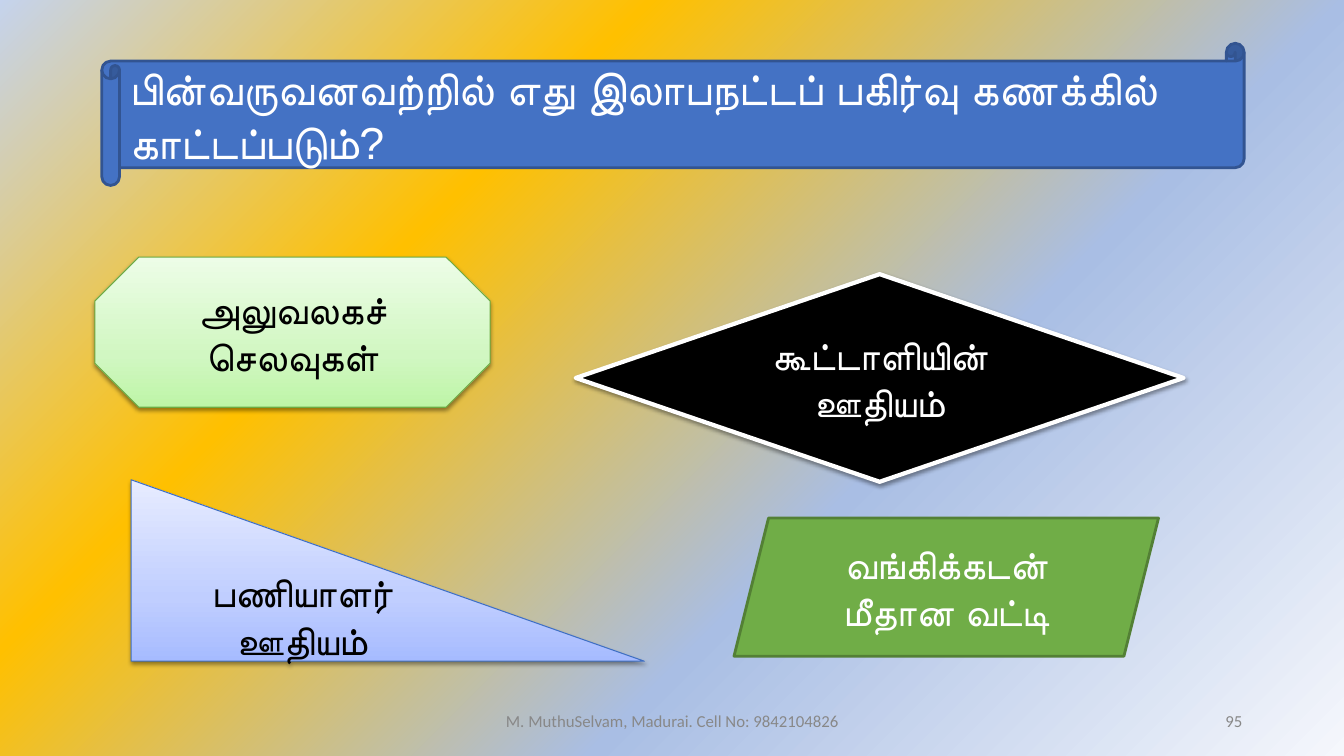
"""Builds a Tamil quiz slide with one question and four answer shapes."""
from lxml import etree
from pptx import Presentation
from pptx.dml.color import RGBColor
from pptx.enum.shapes import MSO_SHAPE
from pptx.enum.text import MSO_ANCHOR, MSO_AUTO_SIZE, PP_ALIGN
from pptx.oxml.ns import qn
from pptx.util import Inches, Pt

SCROLL = MSO_SHAPE.HORIZONTAL_SCROLL
OCTAGON = MSO_SHAPE.OCTAGON
DIAMOND = MSO_SHAPE.DIAMOND
TRIANGLE = MSO_SHAPE.RIGHT_TRIANGLE
PARALLELOGRAM = MSO_SHAPE.PARALLELOGRAM
MIDDLE = MSO_ANCHOR.MIDDLE
NO_AUTOFIT = MSO_AUTO_SIZE.NONE
LEFT, CENTER, RIGHT = PP_ALIGN.LEFT, PP_ALIGN.CENTER, PP_ALIGN.RIGHT
TITLE_ONLY = 5
WHITE, BLACK, GREY = "FFFFFF", "000000", "888888"


def color(hex_text):
    return RGBColor.from_string(hex_text)


def add_node(parent, tag, **attributes):
    node = etree.SubElement(parent, qn(tag))
    for key, value in attributes.items():
        node.set(key, str(value))
    return node


def add_gradient(parent, stops):
    gradient = add_node(parent, "a:gradFill", rotWithShape=1)
    stop_list = add_node(gradient, "a:gsLst")
    for percent, hex_text in stops:
        stop = add_node(stop_list, "a:gs", pos=percent * 1000)
        add_node(stop, "a:srgbClr", val=hex_text)
    return gradient


class QuizSlide:
    """Holds the quiz style and the slide being filled."""

    def __init__(self, presentation):
        self.slide = presentation.slides.add_slide(presentation.slide_layouts[TITLE_ONLY])
        self.quiz_font = "Arial"
        self.footer_font = "Calibri"
        self.question_size = 32
        self.answer_size = 28
        self.footer_size = 12

    def background(self, stops):
        self.slide.background.fill.solid()
        properties = self.slide.element.find(".//" + qn("p:bgPr"))
        gradient = add_gradient(properties, stops)
        properties.replace(properties[0], gradient)
        circle = add_node(gradient, "a:path", path="circle")
        add_node(circle, "a:fillToRect", l=100000, t=100000)

    def add_text(self, holder, text, size, font, hex_text, align):
        frame = holder.text_frame
        frame.word_wrap = True
        frame.auto_size = NO_AUTOFIT
        frame.vertical_anchor = MIDDLE
        paragraph = frame.paragraphs[0]
        paragraph.alignment = align
        run = paragraph.add_run()
        run.text = text
        run.font.size = Pt(size)
        run.font.name = font
        run.font.color.rgb = color(hex_text)
        run_properties = holder.element.find(".//" + qn("a:rPr"))
        add_node(run_properties, "a:cs", typeface=font)

    def panel(self, preset, box, fill, line, width, shadow=False):
        panel = self.slide.shapes.add_shape(preset, *map(Inches, box))
        if isinstance(fill, str):
            panel.fill.solid()
            panel.fill.fore_color.rgb = color(fill)
        else:
            gradient = add_gradient(panel.element.spPr, fill)
            add_node(gradient, "a:lin", ang=270 * 60000, scaled=0)
        panel.line.color.rgb = color(line)
        panel.line.width = Pt(width)
        panel.shadow.inherit = False
        if shadow:
            effects = panel.element.spPr.find(qn("a:effectLst"))
            outer = add_node(effects, "a:outerShdw", blurRad=Pt(3.1), dist=Pt(1.6),
                             dir=90 * 60000, rotWithShape=0)
            shade = add_node(outer, "a:srgbClr", val=BLACK)
            add_node(shade, "a:alpha", val=38000)
        return panel

    def question(self, text, box):
        self.panel(SCROLL, box, "4472C4", "325491", 2)
        left, top, width, height = box
        roll = height / 8
        title = self.slide.shapes.title
        title.left, title.top = Inches(left + roll), Inches(top + roll)
        title.width, title.height = Inches(width - 2 * roll), Inches(height - 2 * roll)
        title.element.getparent().append(title.element)
        self.add_text(title, text, self.question_size, self.quiz_font, WHITE, LEFT)

    def answer(self, text, text_color, *look, **options):
        panel = self.panel(*look, **options)
        self.add_text(panel, text, self.answer_size, self.quiz_font, text_color, CENTER)

    def footer(self, text, left, width, align):
        note = self.slide.shapes.add_textbox(*map(Inches, (left, 6.95, width, 0.4)))
        self.add_text(note, text, self.footer_size, self.footer_font, GREY, align)


def main():
    presentation = Presentation()
    presentation.slide_width = Inches(13.33)
    presentation.slide_height = Inches(7.5)
    quiz = QuizSlide(presentation)
    quiz.background([(0, "F5F7FC"), (36, "A9BEE4"), (69, "FFC000"), (100, "C5D3ED")])
    quiz.question("பின்வருவனவற்றில் எது இலாபநட்டப் பகிர்வு கணக்கில் காட்டப்படும்?",
                  (1.01, 0.43, 11.33, 1.41))
    green_fade = [(0, "BEF5A7"), (35, "D1F7C2"), (100, "EDFDE7")]
    blue_fade = [(0, "A6BBFF"), (35, "C0CEFF"), (100, "E7ECFF")]
    quiz.answer("அலுவலகச் செலவுகள்", BLACK, OCTAGON, (0.94, 2.55, 3.92, 1.49),
                green_fade, "6DAC43", 0.75, shadow=True)
    quiz.answer("கூட்டாளியின் ஊதியம்", WHITE, DIAMOND, (5.71, 2.72, 6.03, 2.06),
                BLACK, WHITE, 3, shadow=True)
    quiz.answer("பணியாளர் ஊதியம்", BLACK, TRIANGLE, (1.3, 4.76, 5.09, 1.8),
                blue_fade, "3F6FC3", 0.75, shadow=True)
    quiz.answer("வங்கிக்கடன் மீதான வட்டி", WHITE, PARALLELOGRAM, (7.28, 5.14, 4.21, 1.37),
                "70AD47", "538035", 2)
    quiz.footer("M. MuthuSelvam, Madurai. Cell No: 9842104826", 4.42, 4.5, CENTER)
    quiz.footer("95", 9.42, 3, RIGHT)
    presentation.save("out.pptx")


if __name__ == "__main__":
    main()
